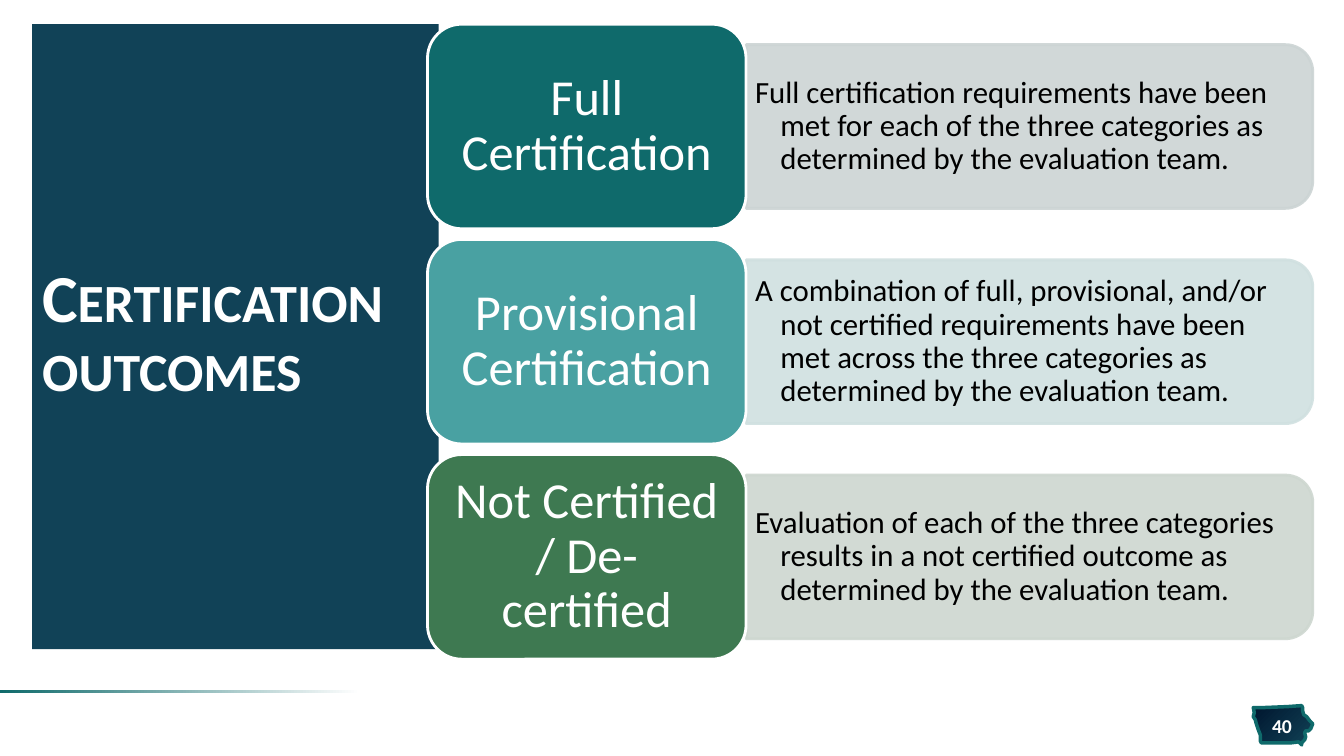
from dataclasses import dataclass

from pptx import Presentation
from pptx.dml.color import RGBColor
from pptx.enum.shapes import MSO_SHAPE
from pptx.enum.text import MSO_ANCHOR, PP_ALIGN
from pptx.oxml.ns import qn
from pptx.util import Inches, Pt

RECT = MSO_SHAPE.RECTANGLE
ROUND = MSO_SHAPE.ROUNDED_RECTANGLE
TAB = MSO_SHAPE.ROUND_2_SAME_RECTANGLE
MIDDLE = MSO_ANCHOR.MIDDLE
CENTER, LEFT = PP_ALIGN.CENTER, PP_ALIGN.LEFT


@dataclass(frozen=True)
class Theme:
    font: str = "Calibri"
    navy: str = "114257"
    night: str = "00162E"
    teal: str = "0F6A6B"
    white: str = "FFFFFF"
    black: str = "000000"
    title: int = 48
    label: int = 36
    body: int = 22
    number: int = 14


THEME = Theme()

# Label, label colour, panel colour, description
OUTCOMES = [
    ("Full Certification", THEME.teal, "CCD4D4",
     "Full certification requirements have been met for each of the three "
     "categories as determined by the evaluation team."),
    ("Provisional Certification", "49A1A2", "D0E0E0",
     "A combination of full, provisional, and/or not certified requirements "
     "have been met across the three categories as determined by the "
     "evaluation team."),
    ("Not Certified / De-certified", "3E7951", "CED7D0",
     "Evaluation of each of the three categories results in a not certified "
     "outcome as determined by the evaluation team."),
]

# State outline, in inches from the corner of the badge
BORDER = [
    (0.48, 0), (0.34, 0.01), (0.1, 0.02), (0, 0.02), (0.01, 0.07),
    (0, 0.11), (0.02, 0.14), (0.03, 0.18), (0.05, 0.24), (0.07, 0.29),
    (0.07, 0.35), (0.08, 0.37), (0.37, 0.37), (0.45, 0.36), (0.48, 0.39),
    (0.48, 0.37), (0.51, 0.34), (0.52, 0.31), (0.51, 0.27), (0.52, 0.25),
    (0.55, 0.25), (0.57, 0.23), (0.59, 0.18), (0.56, 0.15), (0.53, 0.11),
    (0.5, 0.09), (0.49, 0.05), (0.49, 0.02),
]


def rgb(code):
    return RGBColor.from_string(code)


def paint(shape, fill, line=None, width=2):
    shape.shadow.inherit = False
    shape.fill.solid()
    shape.fill.fore_color.rgb = rgb(fill)
    if line:
        shape.line.color.rgb = rgb(line)
        shape.line.width = Pt(width)
    else:
        shape.line.fill.background()


def blend(shape, angle, *stops):
    """Fill with a two-stop gradient; each stop is (position, colour)."""
    shape.fill.gradient()
    shape.fill.gradient_angle = angle
    for stop, (place, code) in zip(shape.fill.gradient_stops, stops):
        stop.position = place
        stop.color.rgb = rgb(code)


def fade(shape, share):
    """Make the solid fill and line opaque by the given percentage."""
    for color in shape.fill._xPr.iter(qn("a:srgbClr")):
        alpha = color.makeelement(qn("a:alpha"), {"val": str(share * 1000)})
        color.append(alpha)


def write(shape, text, size, color, align=LEFT, inset=(0.1, 0.05),
          space=1.0, bold=None):
    frame = shape.text_frame
    frame.word_wrap = True
    frame.vertical_anchor = MIDDLE
    frame.margin_left = frame.margin_right = Inches(inset[0])
    frame.margin_top = frame.margin_bottom = Inches(inset[1])
    para = frame.paragraphs[0]
    para.text = text
    para.alignment = align
    para.line_spacing = space
    font = para.font
    font.name, font.size, font.bold = THEME.font, Pt(size), bold
    font.color.rgb = rgb(color)
    return para


def add_box(slide, kind, x, y, w, h):
    return slide.shapes.add_shape(
        kind, Inches(x), Inches(y), Inches(w), Inches(h))


def add_text(slide, x, y, w, h):
    return slide.shapes.add_textbox(
        Inches(x), Inches(y), Inches(w), Inches(h))


def add_title(slide, x, y, w, h):
    panel = add_box(slide, RECT, x, y, w, h)
    paint(panel, THEME.navy)
    para = write(panel, "Certification outcomes", THEME.title, THEME.white,
                 space=0.85, bold=True)
    para.runs[0].font._element.set("cap", "small")


def add_row(slide, x, y, w, h, outcome):
    name, color, tint, text = outcome
    side, tall = 3.16, h * 0.8
    wide = w - side
    mid_x, mid_y = x + side + wide / 2, y + h / 2

    # The panel is turned a quarter, so its rounded top faces right
    panel = add_box(slide, TAB, mid_x - tall / 2, mid_y - wide / 2, tall, wide)
    panel.rotation = 90
    paint(panel, tint, tint)
    fade(panel, 90)

    note = add_text(slide, x + side, mid_y - 0.735, wide - 0.08, 1.47)
    para = write(note, text, THEME.body, THEME.black, inset=(0.09, 0.05),
                 space=0.9)
    props = para._p.get_or_add_pPr()
    props.set("marL", str(Inches(0.25)))
    props.set("indent", str(Inches(-0.25)))

    label = add_box(slide, ROUND, x, y, side, h)
    paint(label, color, THEME.white)
    write(label, name, THEME.label, THEME.white, CENTER, (0.15, 0.07), 0.9)


def add_rows(slide, x, y, w, h):
    tall = 2.03
    step = (h - tall) / (len(OUTCOMES) - 1)
    for i, outcome in enumerate(OUTCOMES):
        add_row(slide, x, y + i * step, w, tall, outcome)


def add_rule(slide, x, y, w, h):
    rule = add_box(slide, RECT, x, y, w, h)
    paint(rule, THEME.white)
    blend(rule, 180, (0.06, THEME.white), (1, THEME.teal))


def add_badge(slide, x, y):
    points = [(Inches(x + dx), Inches(y + dy)) for dx, dy in BORDER]
    pen = slide.shapes.build_freeform(*points[0])
    pen.add_line_segments(points[1:], close=True)
    state = pen.convert_to_shape()
    paint(state, THEME.navy, THEME.teal, 2.5)
    blend(state, 315, (0, THEME.night), (1, THEME.navy))

    number = add_text(slide, x + 0.03, y + 0.08, 0.51, 0.23)
    write(number, "40", THEME.number, THEME.white, CENTER, (0, 0.05),
          bold=True)


def main():
    deck = Presentation()
    deck.slide_width, deck.slide_height = Inches(13.33), Inches(7.5)
    slide = deck.slides.add_slide(deck.slide_layouts[6])
    add_badge(slide, 12.43, 7)
    add_rule(slide, 0, 6.85, 3.8, 0.03)
    add_title(slide, 0.32, 0.24, 4.03, 6.2)
    add_rows(slide, 4.24, 0.24, 8.78, 6.3)
    deck.save("out.pptx")


if __name__ == "__main__":
    main()
